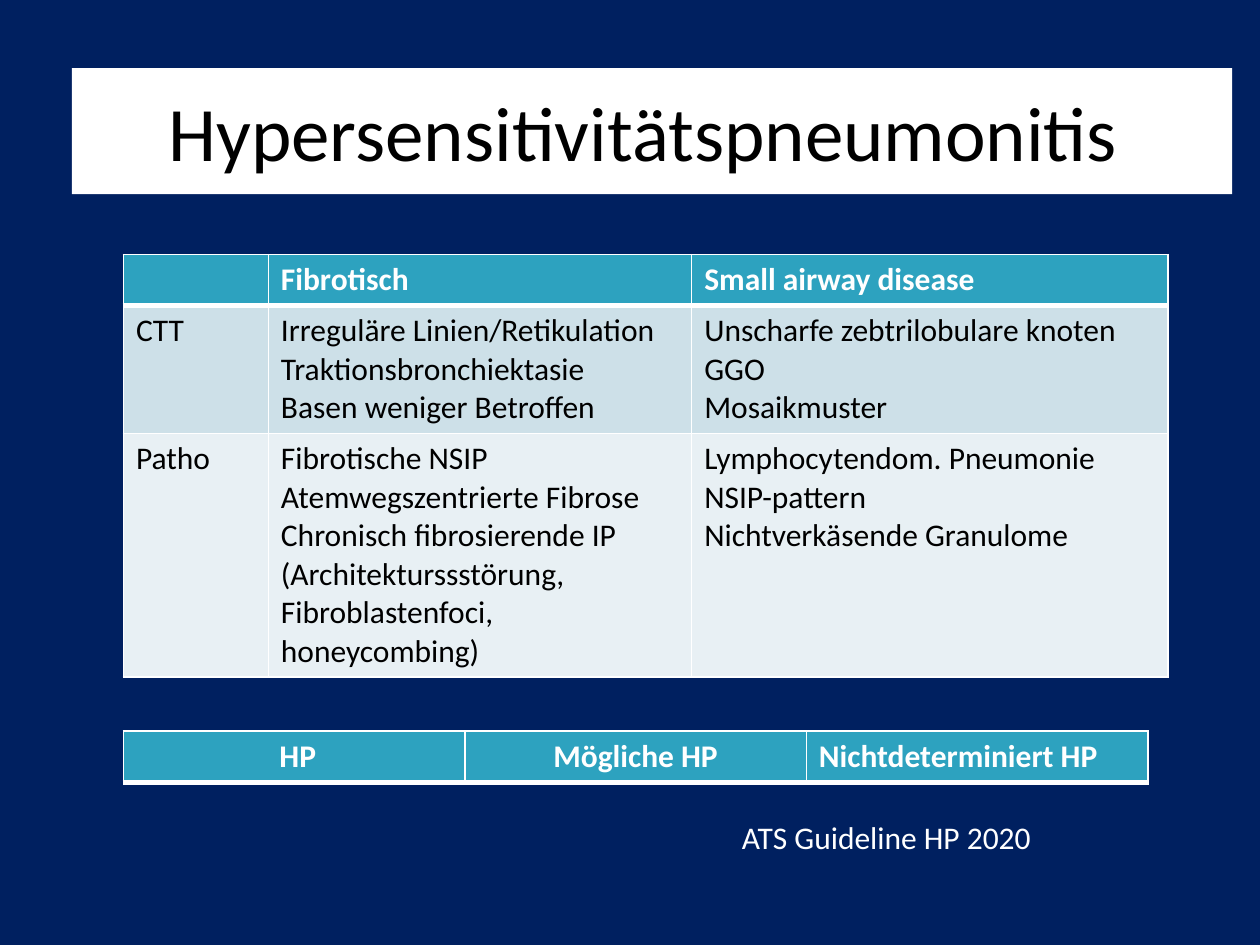
from dataclasses import dataclass

from lxml.etree import SubElement
from pptx import Presentation
from pptx.dml.color import RGBColor
from pptx.enum.text import MSO_ANCHOR, PP_ALIGN
from pptx.oxml.ns import qn
from pptx.util import Inches, Pt

# Grid: 100 columns by 75 rows of square units
SLIDE_WIDTH, SLIDE_HEIGHT = Inches(10), Inches(7.5)
UNIT = SLIDE_WIDTH / 100

NAVY, WHITE, BLACK = "002060", "FFFFFF", "000000"
TEAL, PALE_BLUE, PALER_BLUE = "2DA2BF", "CDE0E8", "E8F0F4"

BODY_FORMAT = {"name": "Calibri", "size": Pt(18), "bold": False}
HEADING_FORMAT = {**BODY_FORMAT, "bold": True}
TITLE_FORMAT = {**BODY_FORMAT, "size": Pt(44)}


@dataclass
class Row:
    height: float
    fill: str
    cells: list[str]
    heading: bool = False
    aligns: tuple = (PP_ALIGN.LEFT,) * 3


@dataclass
class Grid:
    left: float
    top: float
    columns: list[float]
    rows: list[Row]


FINDINGS = Grid(9.8, 20.2, [11.5, 33.6, 37.8], [
    Row(3.9, TEAL, ["", "Fibrotisch", "Small airway disease"], heading=True),
    Row(10.1, PALE_BLUE, [
        "CTT",
        "Irreguläre Linien/Retikulation Traktionsbronchiektasie\nBasen weniger Betroffen",
        "Unscharfe zebtrilobulare knoten\nGGO\nMosaikmuster",
    ]),
    Row(19.2, PALER_BLUE, [
        "Patho",
        "Fibrotische NSIP\nAtemwegszentrierte Fibrose\nChronisch fibrosierende IP\n"
        "(Architekturssstörung, Fibroblastenfoci, honeycombing)",
        "Lymphocytendom. Pneumonie\nNSIP-pattern\nNichtverkäsende Granulome",
    ]),
])
CERTAINTY = Grid(9.8, 58, [27.1] * 3, [
    Row(4.1, TEAL, [" HP", "Mögliche HP", "Nichtdeterminiert HP"], heading=True,
        aligns=(PP_ALIGN.CENTER, PP_ALIGN.CENTER, PP_ALIGN.LEFT)),
])


def units(count: float) -> int:
    return round(count * UNIT)


def color(hex_code: str) -> RGBColor:
    return RGBColor.from_string(hex_code)


def paint(target, hex_code: str) -> None:
    target.fill.solid()
    target.fill.fore_color.rgb = color(hex_code)


def write(frame, text: str, font_format: dict, hex_code: str, align=PP_ALIGN.LEFT) -> None:
    frame.word_wrap = True
    frame.text = text
    for paragraph in frame.paragraphs:
        paragraph.alignment = align
        for run in paragraph.runs:
            for attribute, value in font_format.items():
                setattr(run.font, attribute, value)
            run.font.color.rgb = color(hex_code)


def add_borders(cell, widths: dict[str, float]) -> None:
    properties = cell._tc.get_or_add_tcPr()
    for index, (side, width) in enumerate(widths.items()):
        line = SubElement(properties, qn(f"a:ln{side}"), w=str(Pt(width)))
        fill = SubElement(line, qn("a:solidFill"))
        SubElement(fill, qn("a:srgbClr"), val=WHITE)
        properties.insert(index, line)


def draw_grid(slide, grid: Grid) -> None:
    table = slide.shapes.add_table(
        len(grid.rows), len(grid.columns), units(grid.left), units(grid.top),
        units(sum(grid.columns)), units(sum(row.height for row in grid.rows))).table
    for column, width in zip(table.columns, grid.columns):
        column.width = units(width)
    for row_index, row in enumerate(grid.rows):
        table.rows[row_index].height = units(row.height)
        after_heading = row_index > 0 and grid.rows[row_index - 1].heading
        borders = {"L": 1, "R": 1, "T": 3 if after_heading else 1, "B": 3 if row.heading else 1}
        for column_index, (text, align) in enumerate(zip(row.cells, row.aligns)):
            cell = table.cell(row_index, column_index)
            paint(cell, row.fill)
            add_borders(cell, borders)
            write(cell.text_frame, text, HEADING_FORMAT if row.heading else BODY_FORMAT,
                  WHITE if row.heading else BLACK, align)


def place(shape, left: float, top: float, width: float, height: float) -> None:
    box = {"left": left, "top": top, "width": width, "height": height}
    for attribute, value in box.items():
        setattr(shape, attribute, units(value))


def main() -> None:
    presentation = Presentation()
    presentation.slide_width, presentation.slide_height = SLIDE_WIDTH, SLIDE_HEIGHT
    slide = presentation.slides.add_slide(presentation.slide_layouts.get_by_name("Title Only"))
    paint(slide.background, NAVY)

    # Title band
    title = slide.shapes.title
    place(title, 5.7, 5.4, 92.1, 10)
    paint(title, WHITE)
    title.text_frame.vertical_anchor = MSO_ANCHOR.MIDDLE
    write(title.text_frame, "Hypersensitivitätspneumonitis ", TITLE_FORMAT, BLACK, PP_ALIGN.CENTER)

    # Findings, guideline and diagnostic certainty
    draw_grid(slide, FINDINGS)
    guideline = slide.shapes.add_textbox(units(57.9), units(64.4), units(37.1), units(3.9))
    write(guideline.text_frame, "ATS Guideline HP 2020", BODY_FORMAT, WHITE)
    draw_grid(slide, CERTAINTY)

    presentation.save("out.pptx")


if __name__ == "__main__":
    main()
